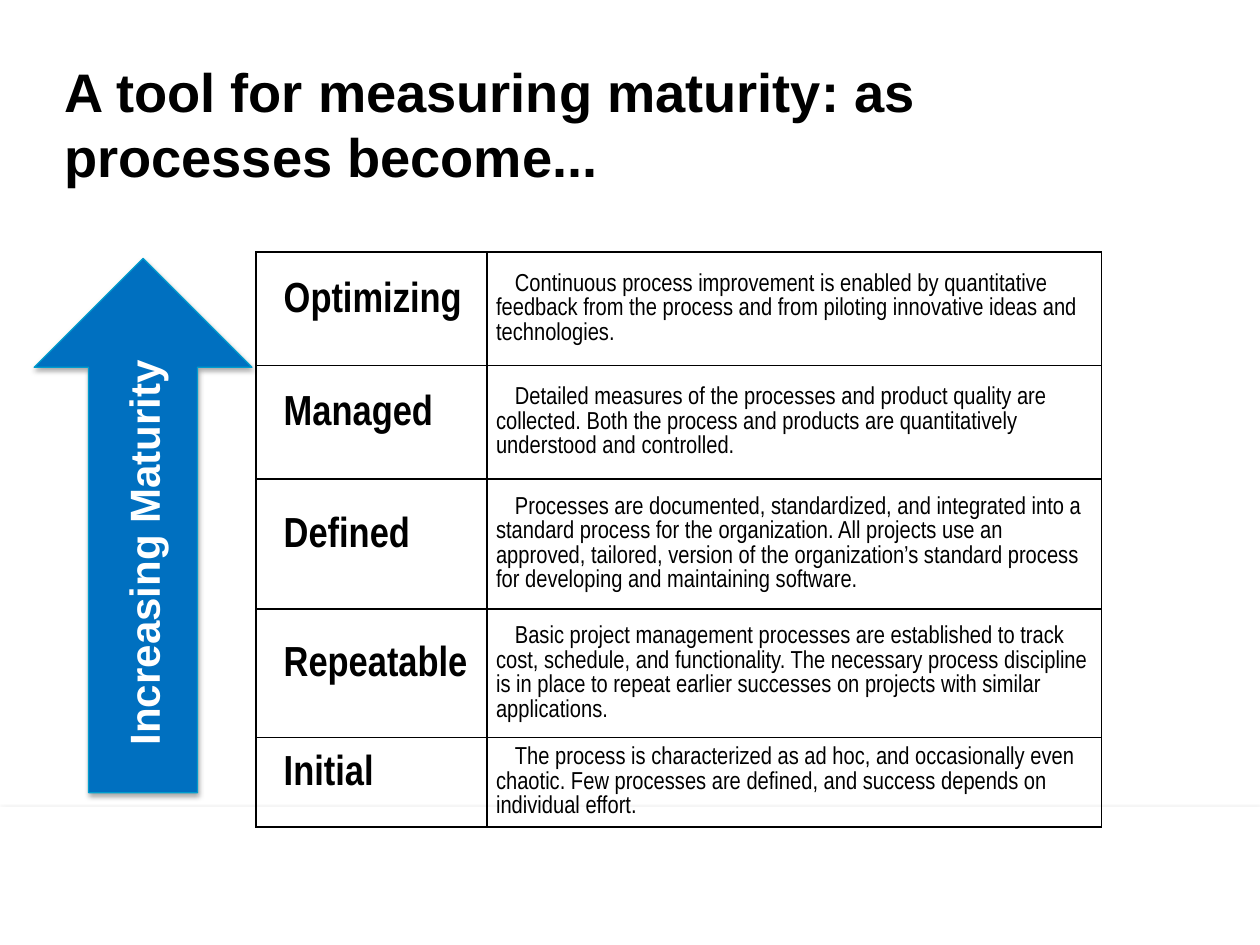
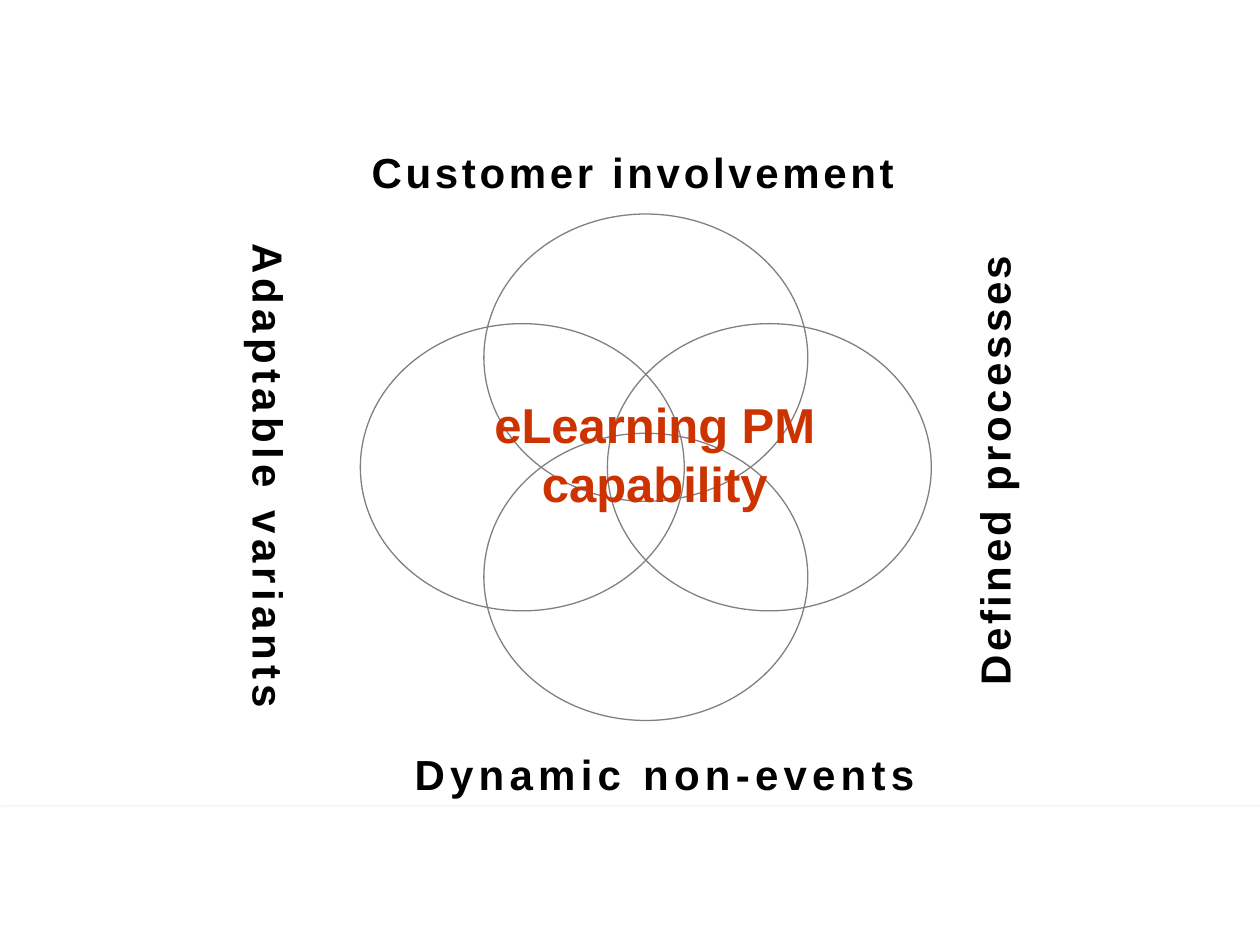
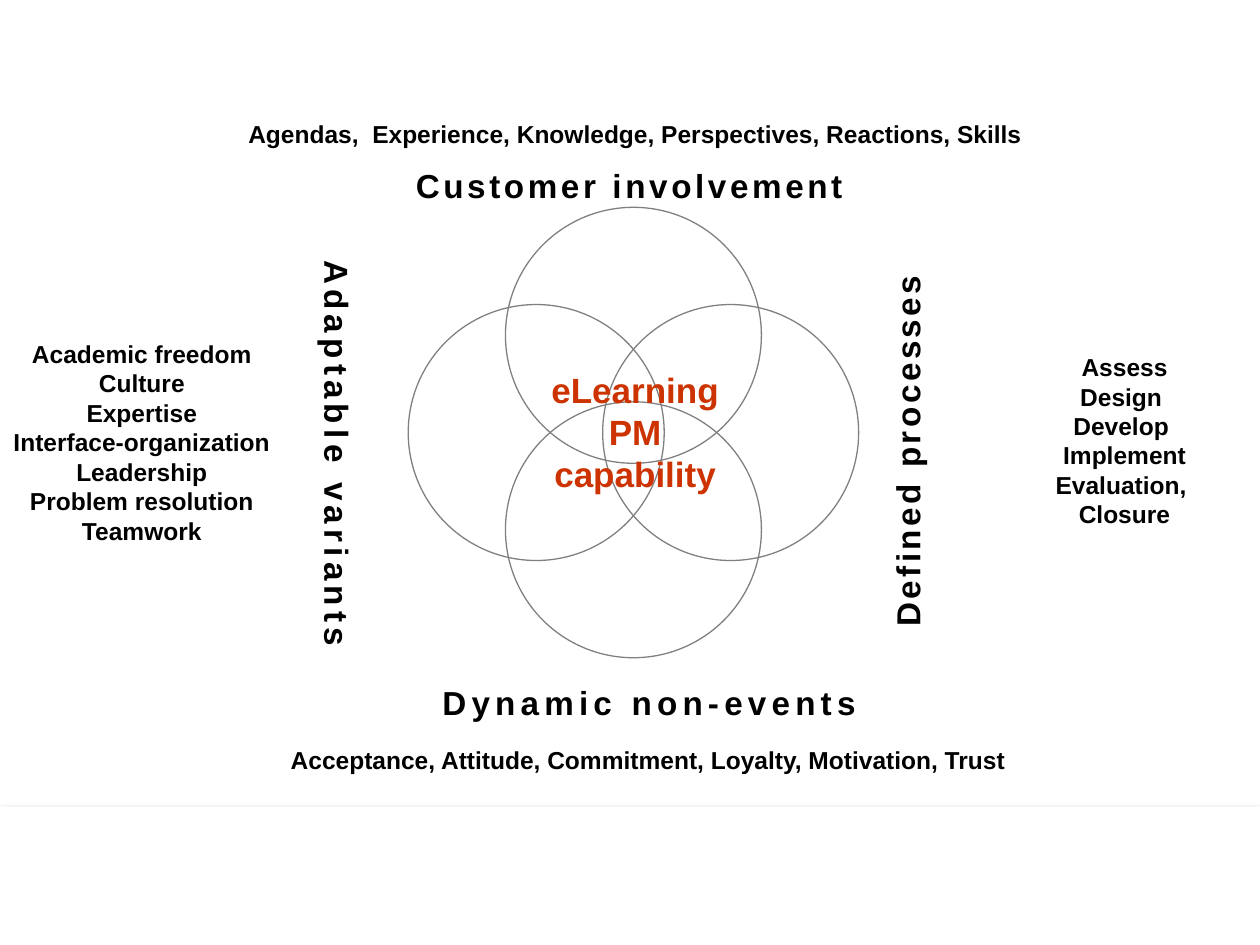
from lxml.etree import SubElement
from pptx import Presentation
from pptx.dml.color import RGBColor
from pptx.enum.shapes import MSO_SHAPE
from pptx.enum.text import MSO_ANCHOR, MSO_AUTO_SIZE, PP_ALIGN
from pptx.oxml.ns import qn
from pptx.util import Cm, Pt

BLACK = RGBColor(0x00, 0x00, 0x00)
WHITE = RGBColor(0xFF, 0xFF, 0xFF)
GRAY = RGBColor(0x80, 0x80, 0x80)
BLUE = RGBColor(0x00, 0x70, 0xC0)
CYAN = RGBColor(0x00, 0x9C, 0xCD)
RED = RGBColor(0xCC, 0x33, 0x00)

LEFT, CENTER, RIGHT = PP_ALIGN.LEFT, PP_ALIGN.CENTER, PP_ALIGN.RIGHT
TOP, MIDDLE = MSO_ANCHOR.TOP, MSO_ANCHOR.MIDDLE

TITLE = "A tool for measuring maturity: as processes become..."
ARROW_TEXT = "Increasing Maturity"
COLUMN_WIDTHS = (4.66, 12.38)
LEVELS = [
    ("Optimizing", 2.29, "Continuous process improvement is enabled by quantitative feedback "
     "from the process and from piloting innovative ideas and technologies."),
    ("Managed", 2.29, "Detailed measures of the processes and product quality are collected. "
     "Both the process and products are quantitatively understood and controlled."),
    ("Defined", 2.62, "Processes are documented, standardized, and integrated into a standard "
     "process for the organization. All projects use an approved, tailored, version of the "
     "organization’s standard process for developing and maintaining software."),
    ("Repeatable", 2.59, "Basic project management processes are established to track cost, "
     "schedule, and functionality. The necessary process discipline is in place to repeat "
     "earlier successes on projects with similar applications."),
    ("Initial", 1.8, "The process is characterized as ad hoc, and occasionally even chaotic. "
     "Few processes are defined, and success depends on individual effort."),
]

CORE_TEXT = "eLearning PM capability"
FACTORS = {
    "top": dict(lines=["Customer involvement"], align=CENTER, spacing=2.1,
                insets=(0.18, 0.08, 0.18, 0)),
    "right": dict(lines=["Defined processes"], align=LEFT, spacing=2, vert="vert270",
                  insets=(0.18, 0.08, 0.18, 0.08)),
    "bottom": dict(lines=["Dynamic non-events"], align=CENTER, spacing=3, anchor=TOP,
                   insets=(0, 0, 0, 0)),
    "left": dict(lines=["Adaptable variants"], align=RIGHT, spacing=3, vert="vert",
                 insets=(0.18, 0.08, 0.18, 0.08)),
}
DIRECTIONS = [(0, -1), (1, 0), (0, 1), (-1, 0)]

LARGE_VENN = dict(
    center=(13.02, 9.42), offset=(2.49, 2.21), circle=(6.53, 5.79), label_size=24,
    labels={"top": (6.76, 2.69, 12, 1.45), "right": (18.27, 4.7, 3.53, 9.2),
            "bottom": (7.4, 15.09, 12, 1.1), "left": (3.53, 4.56, 3.81, 9.8)},
    core=(9.62, 7.82, 7.16, 4.32), core_size=28)
SMALL_VENN = dict(
    center=(12.77, 8.72), offset=(1.96, 1.96), circle=(5.16, 5.16), label_size=19,
    labels={"top": (7.69, 3.05, 10, 1.3), "right": (16.89, 5.12, 2.79, 7.6),
            "bottom": (8.09, 13.76, 10, 1.1), "left": (5.31, 4.81, 3, 8.3)},
    core=(10.71, 7.29, 4.19, 2.82), core_size=20)
ASPECTS = [
    ((0.06, 6.76, 5.6, 4.3), ["Academic freedom", "Culture", "Expertise",
                              "Interface-organization", "Leadership",
                              "Problem resolution", "Teamwork"]),
    ((4.31, 2.08, 17, 1.24),
     ["Agendas,  Experience, Knowledge, Perspectives, Reactions, Skills"]),
    ((5.07, 14.69, 16, 1.24),
     ["Acceptance, Attitude, Commitment, Loyalty, Motivation, Trust"]),
    ((20.97, 7.03, 3.4, 3.7), ["Assess", "Design ", "Develop ", "Implement",
                               "Evaluation, ", "Closure"]),
]


def box(*lengths):
    """Turn centimetres into lengths."""
    return [Cm(v) for v in lengths]


def add_run(p, text, size, color=BLACK, bold=True, font="Arial", spacing=0):
    """Add one formatted run to a paragraph."""
    r = p.add_run()
    r.text = text
    r.font.name, r.font.size, r.font.bold = font, Pt(size), bold
    r.font.color.rgb = color
    if spacing:
        r._r.get_or_add_rPr().set("spc", str(round(spacing * 100)))


def add_text(s, at, lines, size, color=BLACK, align=CENTER, anchor=MIDDLE,
             vert=None, spacing=0, insets=(0.25, 0.13, 0.25, 0.13)):
    """Add a text box with one paragraph per line."""
    sp = s.shapes.add_textbox(*box(*at))
    tf = sp.text_frame
    tf.word_wrap, tf.vertical_anchor = True, anchor
    tf.margin_left, tf.margin_top, tf.margin_right, tf.margin_bottom = box(*insets)
    if vert:
        sp.element.txBody.bodyPr.set("vert", vert)
    for i, line in enumerate(lines):
        p = tf.add_paragraph() if i else tf.paragraphs[0]
        p.alignment = align
        add_run(p, line, size, color, spacing=spacing)


def add_filled(s, kind, at, fill, line=None):
    """Add a filled shape with a soft shadow below it."""
    sp = s.shapes.add_shape(kind, *box(*at))
    sp.fill.solid()
    sp.fill.fore_color.rgb = fill
    if line is None:
        sp.line.fill.background()
    else:
        sp.line.color.rgb, sp.line.width = line, Pt(0.75)
    sp.shadow.inherit = False
    effects = sp.element.spPr.find(qn("a:effectLst"))
    shadow = SubElement(effects, qn("a:outerShdw"), blurRad=str(Pt(3.1)), dist=str(Pt(1.8)),
                        dir="5400000", rotWithShape="0")
    color = SubElement(shadow, qn("a:srgbClr"), val=str(BLACK))
    SubElement(color, qn("a:alpha"), val="35000")
    return sp


def add_band(prs, s):
    """Put the bottom band on the slide master."""
    band = add_filled(s, MSO_SHAPE.RECTANGLE, (0, 16.26, 25.4, 2.79), WHITE)
    prs.slide_master.element.cSld.spTree.insert(2, band.element)


def fill_cell(cell, text, size, bold):
    """Format a table cell with black borders and tight lines."""
    tcPr = cell._tc.get_or_add_tcPr()
    for side in ("lnL", "lnR", "lnT", "lnB"):
        ln = SubElement(tcPr, qn(f"a:{side}"), w=str(Pt(1)))
        SubElement(SubElement(ln, qn("a:solidFill")), qn("a:srgbClr"), val=str(BLACK))
    cell.fill.background()
    cell.vertical_anchor = MIDDLE
    cell.margin_left = cell.margin_right = Cm(0.18)
    cell.margin_top = cell.margin_bottom = 0
    p = cell.text_frame.paragraphs[0]
    p.line_spacing, p.space_after = Pt(14), Pt(6)
    pPr = p._p.get_or_add_pPr()
    pPr.set("marL", "0")
    pPr.set("indent", str(Cm(0.38)))
    add_run(p, text, size, bold=bold, font="Arial Narrow")


def add_levels(s):
    """Add the table of maturity levels."""
    height = sum(level[1] for level in LEVELS)
    frame = s.shapes.add_table(len(LEVELS), 2, *box(5.16, 5.08, sum(COLUMN_WIDTHS), height))
    table = frame.table
    table.first_row = table.horz_banding = False
    for column, width in zip(table.columns, COLUMN_WIDTHS):
        column.width = Cm(width)
    for row, (name, row_height, description) in zip(table.rows, LEVELS):
        row.height = Cm(row_height)
        fill_cell(row.cells[0], name, 24, True)
        fill_cell(row.cells[1], description, 14, False)


def add_title(s):
    """Place and write the slide title."""
    sp = s.shapes.title
    sp.left, sp.top, sp.width, sp.height = box(1.04, 1.04, 19.1, 3.15)
    tf = sp.text_frame
    tf.word_wrap, tf.auto_size, tf.vertical_anchor = True, MSO_AUTO_SIZE.NONE, TOP
    p = tf.paragraphs[0]
    p.alignment = LEFT
    add_run(p, TITLE, 31)


def add_arrow(s):
    """Add the upward arrow with its turned label."""
    sp = add_filled(s, MSO_SHAPE.UP_ARROW, (0.69, 5.21, 4.39, 10.77), BLUE, CYAN)
    sp.element.txBody.bodyPr.set("vert", "vert270")
    sp.text_frame.vertical_anchor = MIDDLE
    p = sp.text_frame.paragraphs[0]
    p.alignment = CENTER
    add_run(p, ARROW_TEXT, 24, WHITE)


def add_venn(s, venn):
    """Add four overlapping circles, their labels and the core text."""
    (cx, cy), (dx, dy), (w, h) = venn["center"], venn["offset"], venn["circle"]
    for x, y in DIRECTIONS:
        sp = s.shapes.add_shape(MSO_SHAPE.OVAL,
                                *box(cx + x * dx - w / 2, cy + y * dy - h / 2, w, h))
        sp.fill.background()
        sp.line.color.rgb, sp.line.width = GRAY, Pt(0.75)
        sp.shadow.inherit = False
    for side, at in venn["labels"].items():
        add_text(s, at, size=venn["label_size"], **FACTORS[side])
    add_text(s, venn["core"], [CORE_TEXT], venn["core_size"], RED, anchor=TOP)


def main():
    """Build the three slides."""
    prs = Presentation()
    prs.slide_width, prs.slide_height = box(25.4, 19.05)
    title_only, blank = prs.slide_layouts[5], prs.slide_layouts[6]

    s = prs.slides.add_slide(title_only)
    add_band(prs, s)
    add_levels(s)
    add_title(s)
    add_arrow(s)

    add_venn(prs.slides.add_slide(blank), LARGE_VENN)

    s = prs.slides.add_slide(blank)
    add_venn(s, SMALL_VENN)
    for at, lines in ASPECTS:
        add_text(s, at, lines, 14, insets=(0.05, 0.05, 0.05, 0.05))

    prs.save("out.pptx")


if __name__ == "__main__":
    main()
